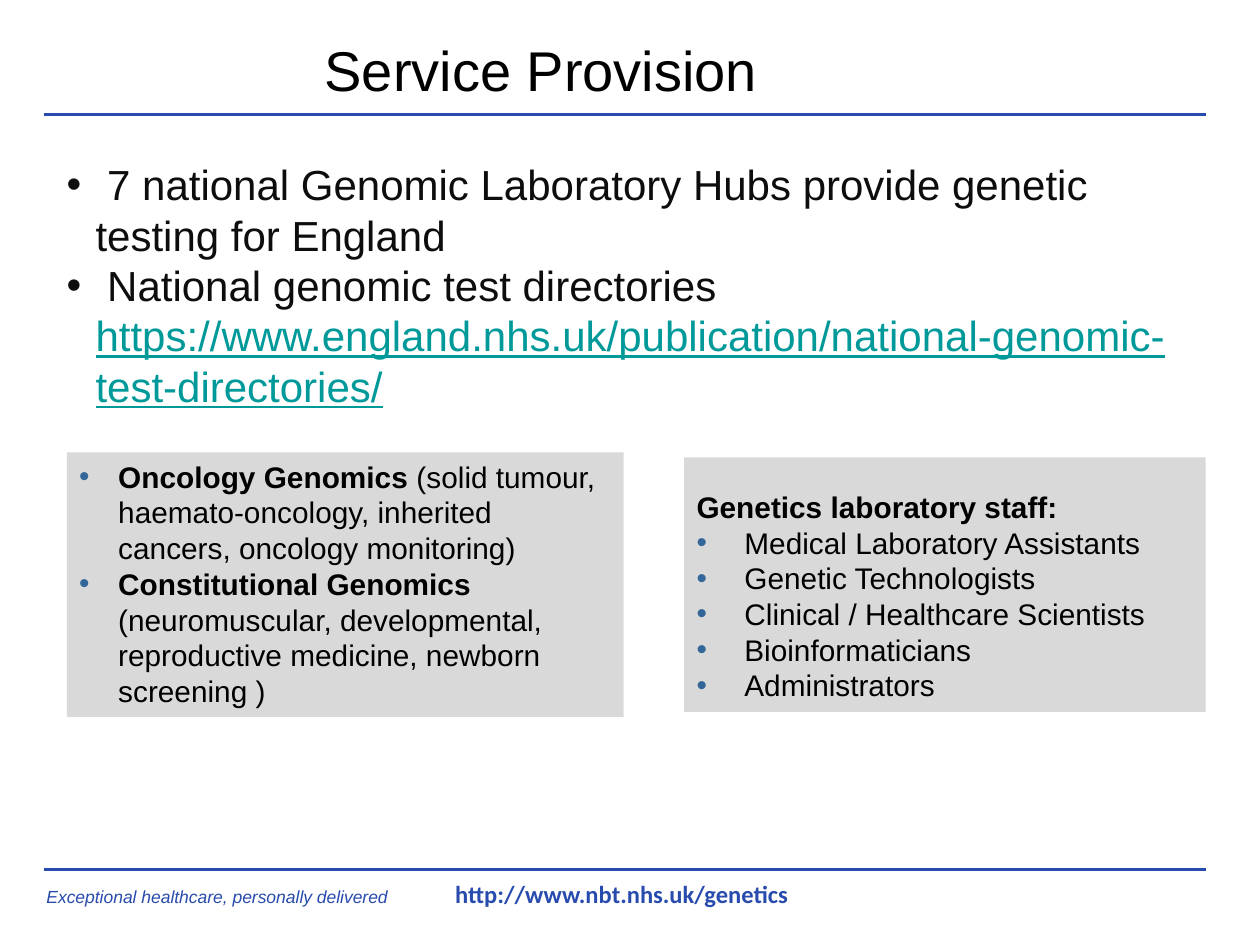
from lxml.etree import SubElement
from pptx import Presentation
from pptx.dml.color import RGBColor
from pptx.enum.shapes import MSO_CONNECTOR, MSO_SHAPE
from pptx.enum.text import MSO_ANCHOR, PP_ALIGN
from pptx.oxml.ns import qn
from pptx.util import Inches, Pt

BLUE, BULLET_BLUE, TEAL = "284BAE", "336699", "009999"
BLACK, DARK, GREY = "000000", "0D0D0D", "D9D9D9"
STAFF = ["Medical Laboratory Assistants", "Genetic Technologists",
         "Clinical / Healthcare Scientists", "Bioinformaticians", "Administrators"]
SERVICES = [
    ("Oncology Genomics ",
     "(solid tumour, haemato-oncology, inherited cancers, oncology monitoring)"),
    ("Constitutional Genomics ",
     "(neuromuscular, developmental, reproductive medicine, newborn screening )"),
]


def rgb(color):
    return RGBColor.from_string(color)


def add_rule(slide, top):
    rule = slide.shapes.add_connector(
        MSO_CONNECTOR.STRAIGHT, Inches(0.35), Inches(top), Inches(9.57), Inches(top))
    rule.line.color.rgb = rgb(BLUE)
    rule.line.width = Pt(1.5)
    SubElement(rule._element.spPr, qn("a:effectLst"))


def add_bullet(paragraph, indent, color):
    properties = paragraph._p.get_or_add_pPr()
    properties.set("marL", str(Inches(indent)))
    properties.set("indent", str(-Inches(indent)))
    fill = SubElement(properties, qn("a:buClr"))
    SubElement(fill, qn("a:srgbClr"), val=color)
    SubElement(properties, qn("a:buFont"), typeface="Arial")
    SubElement(properties, qn("a:buChar"), char="•")


def add_span(paragraph, text, size, color, font="Arial", **styles):
    """Add a run; styles are font attributes such as bold or italic."""
    span = paragraph.add_run()
    span.text = text
    span.font.name = font
    span.font.size = Pt(size)
    span.font.color.rgb = rgb(color)
    for name, value in styles.items():
        setattr(span.font, name, value)


def next_paragraph(frame):
    """Return the still empty first paragraph, or a new one."""
    first = frame.paragraphs[0]
    paragraph = frame.add_paragraph() if first.runs else first
    paragraph.alignment = PP_ALIGN.LEFT
    return paragraph


def add_text_box(slide, left, top, width, height):
    box = slide.shapes.add_textbox(
        Inches(left), Inches(top), Inches(width), Inches(height))
    box.text_frame.word_wrap = True
    return box.text_frame


def add_panel(slide, left, top, width, height):
    panel = slide.shapes.add_shape(
        MSO_SHAPE.RECTANGLE, Inches(left), Inches(top), Inches(width), Inches(height))
    panel.shadow.inherit = False
    panel.fill.solid()
    panel.fill.fore_color.rgb = rgb(GREY)
    panel.line.fill.background()
    panel.text_frame.word_wrap = True
    panel.text_frame.vertical_anchor = MSO_ANCHOR.TOP
    return panel.text_frame


def add_line(slide, text, place, size, color, align=PP_ALIGN.CENTER, **styles):
    """Add a text box that holds one line."""
    frame = add_text_box(slide, *place)
    paragraph = next_paragraph(frame)
    paragraph.alignment = align
    add_span(paragraph, text, size, color, **styles)
    return frame


def add_overview(slide):
    frame = add_text_box(slide, 0.43, 1.21, 9.19, 2.26)
    for text, address in [
        (" 7 national Genomic Laboratory Hubs provide genetic testing for England", ""),
        (" National genomic test directories ",
         "https://www.england.nhs.uk/publication/national-genomic-test-directories/"),
    ]:
        paragraph = next_paragraph(frame)
        add_bullet(paragraph, 0.23, DARK)
        add_span(paragraph, text, 24, DARK)
        if address:
            add_span(paragraph, address, 24, TEAL, underline=True)


def add_staff(slide):
    frame = add_panel(slide, 5.43, 3.63, 4.14, 2.02)
    heading = next_paragraph(frame)
    heading.line_spacing = 1.7
    add_span(heading, "Genetics laboratory staff:", 17, BLACK, bold=True)
    for role in STAFF:
        paragraph = next_paragraph(frame)
        add_bullet(paragraph, 0.38, BULLET_BLUE)
        add_span(paragraph, role, 17, BLACK)


def add_services(slide):
    frame = add_panel(slide, 0.53, 3.59, 4.42, 2.1)
    for name, details in SERVICES:
        paragraph = next_paragraph(frame)
        add_bullet(paragraph, 0.31, BULLET_BLUE)
        add_span(paragraph, name, 17, BLACK, bold=True)
        add_span(paragraph, details, 17, BLACK)


def main():
    deck = Presentation()
    deck.slide_width, deck.slide_height = Inches(10), Inches(7.5)
    slide = deck.slides.add_slide(deck.slide_layouts[6])
    add_line(slide, "Exceptional healthcare, personally delivered",
             (0.27, 6.98, 2.99, 0.27), 10, BLUE, PP_ALIGN.LEFT, italic=True)
    for top in (6.9, 0.91):
        add_rule(slide, top)
    title = add_line(slide, "Service Provision", (0.47, 0.28, 7.65, 0.54), 32, BLACK)
    title.vertical_anchor = MSO_ANCHOR.MIDDLE
    add_line(slide, "http://www.nbt.nhs.uk/genetics",
             (3.35, 6.93, 3.17, 0.52), 14, BLUE, font="Calibri", bold=True)
    add_overview(slide)
    add_staff(slide)
    add_services(slide)
    deck.save("out.pptx")


if __name__ == "__main__":
    main()
